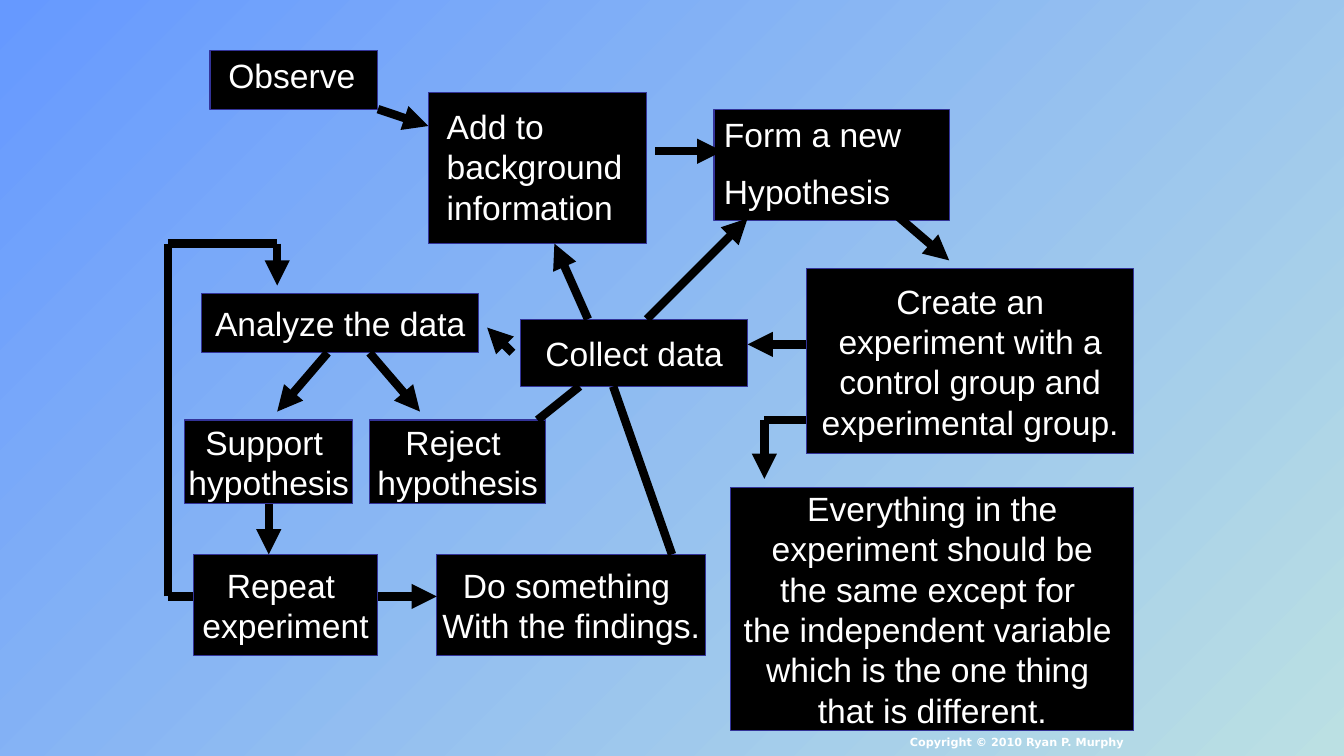
from lxml.etree import SubElement
from pptx import Presentation
from pptx.dml.color import RGBColor
from pptx.enum.shapes import MSO_CONNECTOR, MSO_SHAPE
from pptx.enum.text import MSO_ANCHOR, MSO_AUTO_SIZE, PP_ALIGN
from pptx.oxml.ns import qn
from pptx.util import Cm, Pt

GRID = 2.54 / 12  # the slide is 160 by 90 grid steps


def grid(*steps):
    """Turn grid steps into lengths."""
    return [Cm(step * GRID) for step in steps]


def write(box, lines, align, size=24, font="Arial", bold=False, gap=0):
    frame = box.text_frame
    frame.text = "\n".join(lines)
    for index, para in enumerate(frame.paragraphs):
        para.alignment = align
        para.space_before = Pt(gap if index else 0)
        para.font.size = Pt(size)
        para.font.name = font
        para.font.bold = bold
        para.font.color.rgb = RGBColor.from_string("FFFFFF")
    return frame


deck = Presentation()
deck.slide_width, deck.slide_height = grid(160, 90)
page = deck.slides.add_slide(deck.slide_layouts[6])

backdrop = page.background.fill
backdrop.gradient()
backdrop.gradient_angle = 315
for stop, colour in zip(backdrop.gradient_stops, ["6699FF", "BBE0E3"]):
    stop.color.rgb = RGBColor.from_string(colour)

# Left, top, width, height in grid steps, then the centred lines
steps = [
    (25, 6, 20, 7, []),
    (51, 11, 26, 18, []),
    (85, 13, 28, 13.3, ["Form a new", "Hypothesis"]),
    (96, 32, 39, 22, ["Create an", "experiment with a",
                      " control group and ", "experimental group."]),
    (62, 38, 27, 8, ["Collect data"]),
    (24, 35, 33, 7, ["Analyze the data"]),
    (22, 50, 20, 10, ["Support ", "hypothesis"]),
    (44, 50, 21, 10, ["Reject ", "hypothesis"]),
    (23, 66, 22, 12, ["Repeat ", "experiment"]),
    (52, 66, 32, 12, ["Do something ", "With the findings."]),
    (87, 58, 48, 29, ["Everything in the", "experiment should be",
                      "the same except for ", "the independent variable ",
                      "which is the one thing ", "that is different."]),
]
for *place, lines in steps:
    box = page.shapes.add_shape(MSO_SHAPE.RECTANGLE, *grid(*place))
    box.shadow.inherit = False
    box.fill.solid()
    box.fill.fore_color.rgb = RGBColor.from_string("000000")
    box.line.color.rgb = RGBColor.from_string("333399")
    box.line.width = Pt(0.75)
    if lines and lines[0] == "Form a new":
        frame = write(box, lines, PP_ALIGN.LEFT, gap=12)
        frame.vertical_anchor = MSO_ANCHOR.TOP
        frame.word_wrap = True
    elif lines:
        frame = write(box, lines, PP_ALIGN.CENTER)
        frame.vertical_anchor = MSO_ANCHOR.MIDDLE
        frame.word_wrap = False

# Each route is a chain of corner points, with or without an arrowhead
routes = [
    ([(45, 13), (51, 15)], True),
    ([(78, 18), (86, 18)], True),
    ([(106, 25), (113, 31)], True),
    ([(96, 41), (89, 41)], True),
    ([(61, 42), (58, 39)], True),
    ([(39, 42), (33, 49)], True),
    ([(44, 42), (50, 49)], True),
    ([(64, 50), (69, 46)], False),
    ([(77, 38), (89, 26)], True),
    ([(23, 71), (20, 71), (20, 29), (33, 29), (33, 34)], True),
    ([(32, 60), (32, 66)], True),
    ([(45, 71), (52, 71)], True),
    ([(80, 66), (73, 46)], False),
    ([(70, 38), (66, 29)], True),
    ([(96, 50), (91, 50), (91, 57)], True),
]
for points, has_arrow in routes:
    for start, end in zip(points, points[1:]):
        link = page.shapes.add_connector(MSO_CONNECTOR.STRAIGHT, *grid(*start, *end))
        link.line.color.rgb = RGBColor.from_string("000000")
        link.line.width = Pt(6)
        if has_arrow and end == points[-1]:
            SubElement(link.line._get_or_add_ln(), qn("a:tailEnd"), type="triangle")
        SubElement(link._element.spPr, qn("a:effectLst"))

captions = [
    ((26, 6, 27, 6), "Observe", PP_ALIGN.LEFT, {}),
    ((52, 12, 24, 15.7), "Add to background information", PP_ALIGN.LEFT, {}),
    ((95, 87, 40, 2.8), "Copyright © 2010 Ryan P. Murphy", PP_ALIGN.RIGHT,
     {"size": 8, "font": "DejaVu Sans", "bold": True}),
]
for place, words, align, style in captions:
    box = page.shapes.add_textbox(*grid(*place))
    frame = write(box, [words], align, **style)
    frame.word_wrap = True
    frame.auto_size = MSO_AUTO_SIZE.SHAPE_TO_FIT_TEXT

deck.save("out.pptx")
